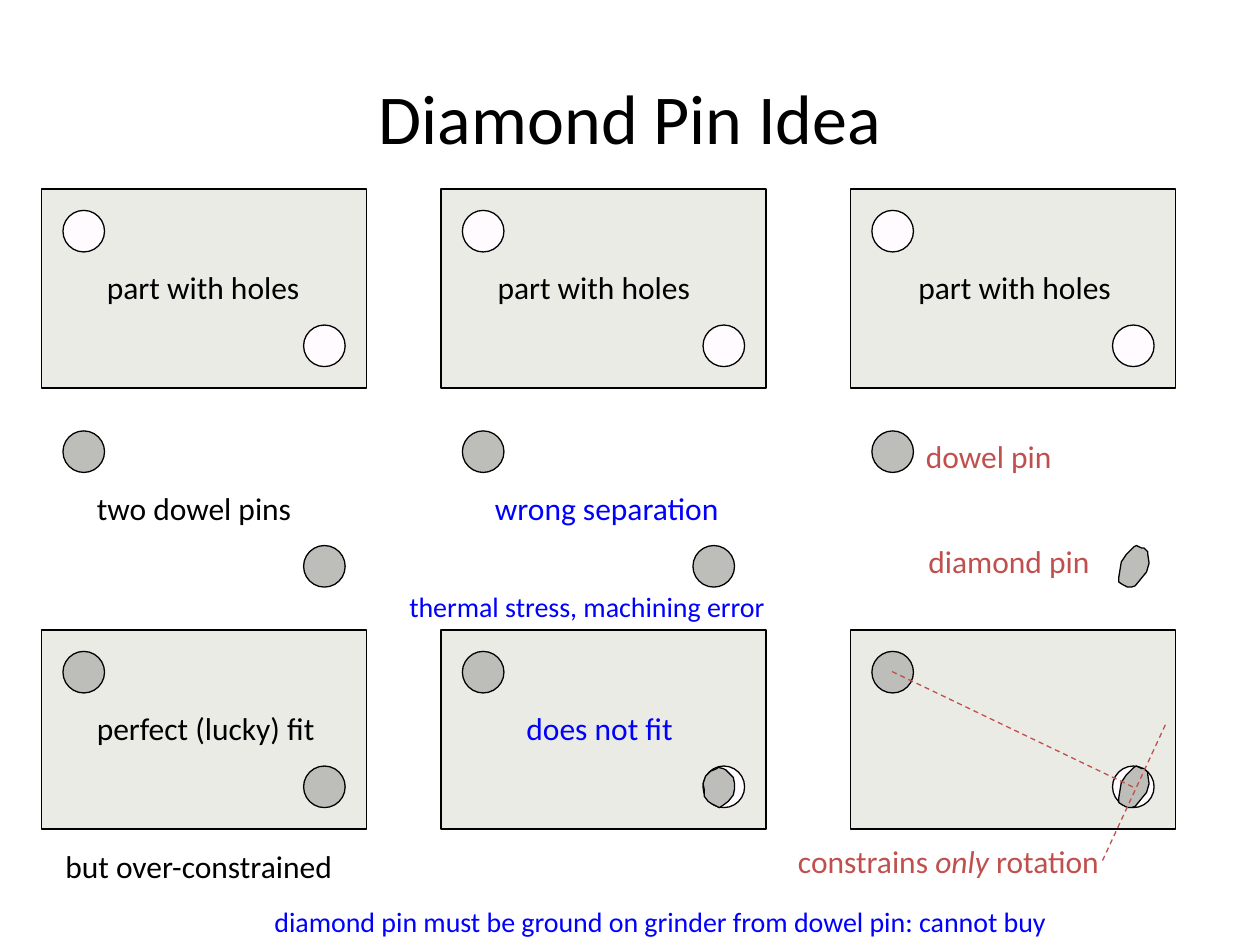
"""Build the Diamond Pin Idea slide."""
import lxml.etree
import pptx
import pptx.dml.color
import pptx.enum.dml
import pptx.enum.shapes
import pptx.enum.text
import pptx.oxml.ns
import pptx.util

Inches = pptx.util.Inches
RGBColor = pptx.dml.color.RGBColor
SHAPES = pptx.enum.shapes.MSO_SHAPE
ALIGN = pptx.enum.text.PP_ALIGN

BLACK = RGBColor(0x00, 0x00, 0x00)
BLUE = RGBColor(0x00, 0x00, 0xFF)
RED = RGBColor(0xC0, 0x50, 0x4D)
PLATE = RGBColor(0xEA, 0xEB, 0xE5)
HOLE = RGBColor(0xFF, 0xFB, 0xFE)
PIN = RGBColor(0xBD, 0xBD, 0xB9)

COLUMNS = (0.33, 3.5, 6.75)
PARTS_TOP, PINS_TOP, FITS_TOP = 1.5, 3.25, 5
NEAR = (0.17, 0.17)
FAR = (2.08, 1.08)
DIAMETER = 0.33

DIAMOND = [
    (8.88, 4.62), (8.91, 4.64), (8.95, 4.66), (8.98, 4.66), (9.01, 4.65),
    (9.1, 4.54), (9.12, 4.47), (9.11, 4.4), (9.11, 4.38), (9.08, 4.35),
    (9.06, 4.35), (9.02, 4.33), (9, 4.34), (8.94, 4.4), (8.9, 4.46), (8.88, 4.58),
]
CUT_PIN = [
    (5.7, 6.09), (5.74, 6.1), (5.76, 6.11), (5.79, 6.14), (5.82, 6.17),
    (5.83, 6.22), (5.83, 6.26), (5.82, 6.31), (5.78, 6.36), (5.74, 6.39),
    (5.71, 6.41), (5.65, 6.38), (5.62, 6.36), (5.59, 6.32), (5.59, 6.27),
    (5.58, 6.22), (5.6, 6.16), (5.64, 6.12), (5.69, 6.1),
]
LABELS = [
    ("part with holes", 0.75, 2.08, 1.81, 18, BLACK),
    ("part with holes", 3.85, 2.08, 1.81, 18, BLACK),
    ("part with holes", 7.19, 2.08, 1.81, 18, BLACK),
    ("two dowel pins", 0.67, 3.83, 1.84, 18, BLACK),
    ("perfect (lucky) fit", 0.67, 5.58, 2.03, 18, BLACK),
    ("but over-constrained", 0.42, 6.67, 2.48, 18, BLACK),
    ("wrong separation", 3.83, 3.83, 2.12, 18, BLUE),
    ("does not fit", 4.08, 5.58, 1.42, 18, BLUE),
    ("thermal stress, machining error", 3.15, 4.63, 3.26, 16, BLUE),
    ("dowel pin", 7.25, 3.42, 1.26, 18, RED),
    ("diamond pin", 7.27, 4.25, 1.56, 18, RED),
    ("diamond pin must be ground on grinder from dowel pin: cannot buy",
     2.08, 7.13, 6.8, 16, BLUE),
]


class Sketch:
    """Hold the drawing style and the current slide."""

    font = "Calibri"
    line_width = pptx.util.Pt(0.75)

    def __init__(self, slide):
        self.slide = slide

    def finish(self, shape, fill):
        shape.shadow.inherit = False
        shape.fill.solid()
        shape.fill.fore_color.rgb = fill
        shape.line.color.rgb = BLACK
        shape.line.width = self.line_width

    def plate(self, left, top):
        shape = self.slide.shapes.add_shape(
            SHAPES.RECTANGLE, Inches(left), Inches(top), Inches(2.58), Inches(1.58))
        self.finish(shape, PLATE)

    def circle(self, left, top, offset, fill):
        shape = self.slide.shapes.add_shape(
            SHAPES.OVAL, Inches(left + offset[0]), Inches(top + offset[1]),
            Inches(DIAMETER), Inches(DIAMETER))
        self.finish(shape, fill)

    def outline(self, points, drop=0):
        start, *rest = [(Inches(x), Inches(y + drop)) for x, y in points]
        builder = self.slide.shapes.build_freeform(*start)
        builder.add_line_segments(rest, close=True)
        self.finish(builder.convert_to_shape(), PIN)

    def dashed_line(self, start, end):
        connector = self.slide.shapes.add_connector(
            pptx.enum.shapes.MSO_CONNECTOR.STRAIGHT,
            *(Inches(length) for length in (*start, *end)))
        connector.line.color.rgb = RED
        connector.line.width = self.line_width
        connector.line.dash_style = pptx.enum.dml.MSO_LINE.DASH
        lxml.etree.SubElement(
            connector._element.spPr, pptx.oxml.ns.qn("a:effectLst"))

    def text(self, runs, left, top, width, size, color,
             height=0.4, align=ALIGN.LEFT, wrap=False):
        box = self.slide.shapes.add_textbox(
            Inches(left), Inches(top), Inches(width), Inches(height))
        frame = box.text_frame
        frame.word_wrap = wrap
        frame.vertical_anchor = (pptx.enum.text.MSO_ANCHOR.MIDDLE if wrap
                                 else pptx.enum.text.MSO_ANCHOR.TOP)
        paragraph = frame.paragraphs[0]
        paragraph.alignment = align
        for words, italic in runs:
            run = paragraph.add_run()
            run.text = words
            run.font.color.rgb = color
            values = {"name": self.font, "size": pptx.util.Pt(size), "italic": italic}
            for name, value in values.items():
                setattr(run.font, name, value)


def main():
    presentation = pptx.Presentation()
    presentation.slide_width = Inches(10)
    presentation.slide_height = Inches(7.5)
    sketch = Sketch(presentation.slides.add_slide(presentation.slide_layouts[6]))

    sketch.text([("Diamond Pin Idea", None)], 0.5, 0.3, 9, 40, BLACK,
                height=1.25, align=ALIGN.CENTER, wrap=True)

    far_fills = (PIN, HOLE, HOLE)
    for left, far_fill in zip(COLUMNS, far_fills):
        sketch.plate(left, PARTS_TOP)
        sketch.circle(left, PARTS_TOP, NEAR, HOLE)
        sketch.circle(left, PARTS_TOP, FAR, HOLE)
        sketch.circle(left, PINS_TOP, NEAR, PIN)
        sketch.plate(left, FITS_TOP)
        sketch.circle(left, FITS_TOP, NEAR, PIN)
        sketch.circle(left, FITS_TOP, FAR, far_fill)

    sketch.circle(COLUMNS[0], PINS_TOP, FAR, PIN)
    sketch.circle(COLUMNS[1], PINS_TOP, (2, FAR[1]), PIN)
    sketch.outline(DIAMOND)
    sketch.outline(DIAMOND, drop=FITS_TOP - PINS_TOP)
    sketch.outline(CUT_PIN)

    for words, *placing in LABELS:
        sketch.text([(words, None)], *placing)
    sketch.dashed_line((7.08, 5.33), (9, 6.25))
    sketch.dashed_line((8.75, 6.83), (9.25, 5.75))
    sketch.text([("constrains ", None), ("only", True), (" rotation", False)],
                6.05, 6.63, 2.77, 18, RED, align=ALIGN.RIGHT)
    presentation.save("out.pptx")


if __name__ == "__main__":
    main()
